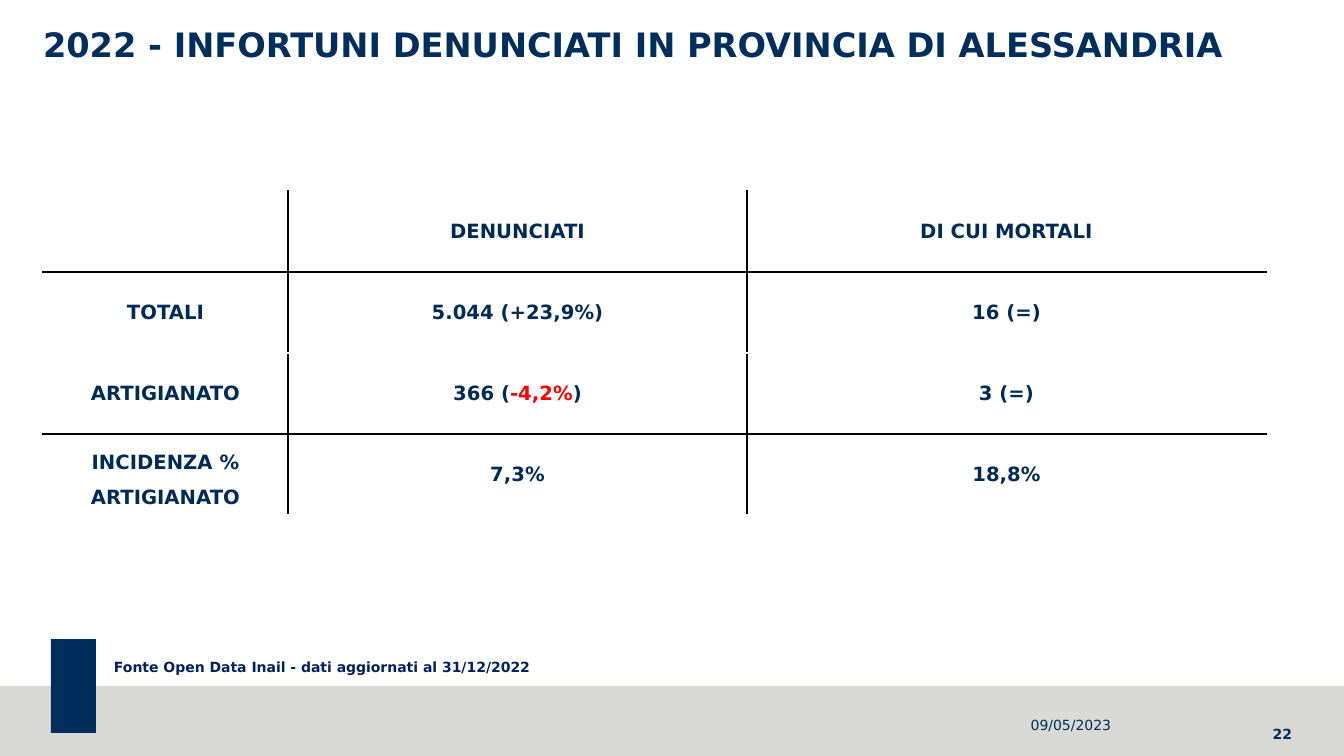
import pptx
import pptx.util
import pptx.dml.color
import pptx.enum.shapes
import pptx.enum.text
import pptx.oxml
import pptx.oxml.ns
from lxml import etree

COLORS = {
    "navy": "002E5D",
    "ink": "002B56",
    "source": "002060",
    "red": "FF0000",
    "grey": "D9D9D6",
    "black": "000000",
    "white": "FFFFFF",
}
ALIGN = pptx.enum.text.PP_ALIGN
ANCHOR = pptx.enum.text.MSO_ANCHOR


def px(n):
    return pptx.util.Emu(round(n * 914400 / 100.8))


def rgb(name):
    return pptx.dml.color.RGBColor.from_string(COLORS[name])


def write(p, text, size=14, color="ink", bold=True, align=ALIGN.LEFT, spacing=None):
    p.alignment = align
    if spacing:
        p.line_spacing = spacing
    runs = [(text, color)] if isinstance(text, str) else text
    for part, part_color in runs:
        r = p.add_run()
        r.text = part
        r.font.name = "DejaVu Sans"
        r.font.size = pptx.util.Pt(size)
        r.font.bold = bold
        r.font.color.rgb = rgb(part_color)


class Deck:
    def __init__(self, width, height):
        self.prs = pptx.Presentation()
        self.prs.slide_width = px(width)
        self.prs.slide_height = px(height)
        self.s = self.prs.slides.add_slide(self.prs.slide_layouts[6])

    def rect(self, x, y, w, h, color):
        kind = pptx.enum.shapes.MSO_SHAPE.RECTANGLE
        sp = self.s.shapes.add_shape(kind, px(x), px(y), px(w), px(h))
        sp.shadow.inherit = False
        sp.fill.solid()
        sp.fill.fore_color.rgb = rgb(color)
        sp.line.fill.background()

    def text(self, x, y, w, h, text, anchor=ANCHOR.TOP, **fmt):
        tf = self.s.shapes.add_textbox(px(x), px(y), px(w), px(h)).text_frame
        tf.word_wrap = True
        tf.vertical_anchor = anchor
        tf.margin_left = tf.margin_top = tf.margin_right = tf.margin_bottom = 0
        write(tf.paragraphs[0], text, **fmt)

    def border(self, cell, side, color):
        tcPr = cell._tc.get_or_add_tcPr()
        ln = etree.SubElement(tcPr, pptx.oxml.ns.qn(f"a:ln{side}"), w="12700")
        fill = etree.SubElement(ln, pptx.oxml.ns.qn("a:solidFill"))
        etree.SubElement(fill, pptx.oxml.ns.qn("a:srgbClr"), val=COLORS[color])

    def table(self, x, y, widths, row_h, rows, col_edges, row_edges):
        frame = self.s.shapes.add_table(
            len(rows), len(widths), px(x), px(y), px(sum(widths)), px(row_h * len(rows)))
        table = frame.table
        table.first_row = table.horz_banding = False
        for col, width in zip(table.columns, widths):
            col.width = px(width)
        for i, row in enumerate(rows):
            table.rows[i].height = px(row_h)
            for j, text in enumerate(row):
                cell = table.cell(i, j)
                cell.vertical_anchor = ANCHOR.MIDDLE
                self.border(cell, "L", col_edges[j])
                self.border(cell, "R", col_edges[j + 1])
                self.border(cell, "T", row_edges[i])
                self.border(cell, "B", row_edges[i + 1])
                cell.fill.background()
                if text:
                    spacing = 1.5 if text == "INCIDENZA % ARTIGIANATO" else None
                    write(cell.text_frame.paragraphs[0], text,
                          align=ALIGN.CENTER, spacing=spacing)


def main():
    deck = Deck(1344, 756)
    deck.rect(0, 686, 1344, 70, "grey")
    deck.rect(51, 639, 45, 94, "navy")
    deck.text(43, 28, 1266, 77, "2022 - INFORTUNI DENUNCIATI IN PROVINCIA DI ALESSANDRIA",
              size=24, color="navy", spacing=0.9)
    deck.text(953, 717, 158, 18, "09/05/2023",
              size=10, color="navy", bold=False, align=ALIGN.RIGHT)
    deck.text(1132, 714, 160, 40, "22", anchor=ANCHOR.MIDDLE,
              size=10, color="navy", align=ALIGN.RIGHT)
    rows = [
        ["", "DENUNCIATI", "DI CUI MORTALI"],
        ["TOTALI", "5.044 (+23,9%)", [("16 (=", "ink"), (")", "source")]],
        ["ARTIGIANATO", [("366 (", "ink"), ("-4,2%", "red"), (")", "ink")], "3 (=)"],
        ["INCIDENZA % ARTIGIANATO", "7,3%", "18,8%"],
    ]
    deck.table(43, 191, [245, 459, 519], 81, rows,
               col_edges=["white", "black", "black", "white"],
               row_edges=["white", "black", "white", "black", "white"])
    deck.text(114, 659, 1170, 18, "Fonte Open Data Inail - dati aggiornati al 31/12/2022",
              size=10, color="source")
    deck.prs.save("out.pptx")


if __name__ == "__main__":
    main()
